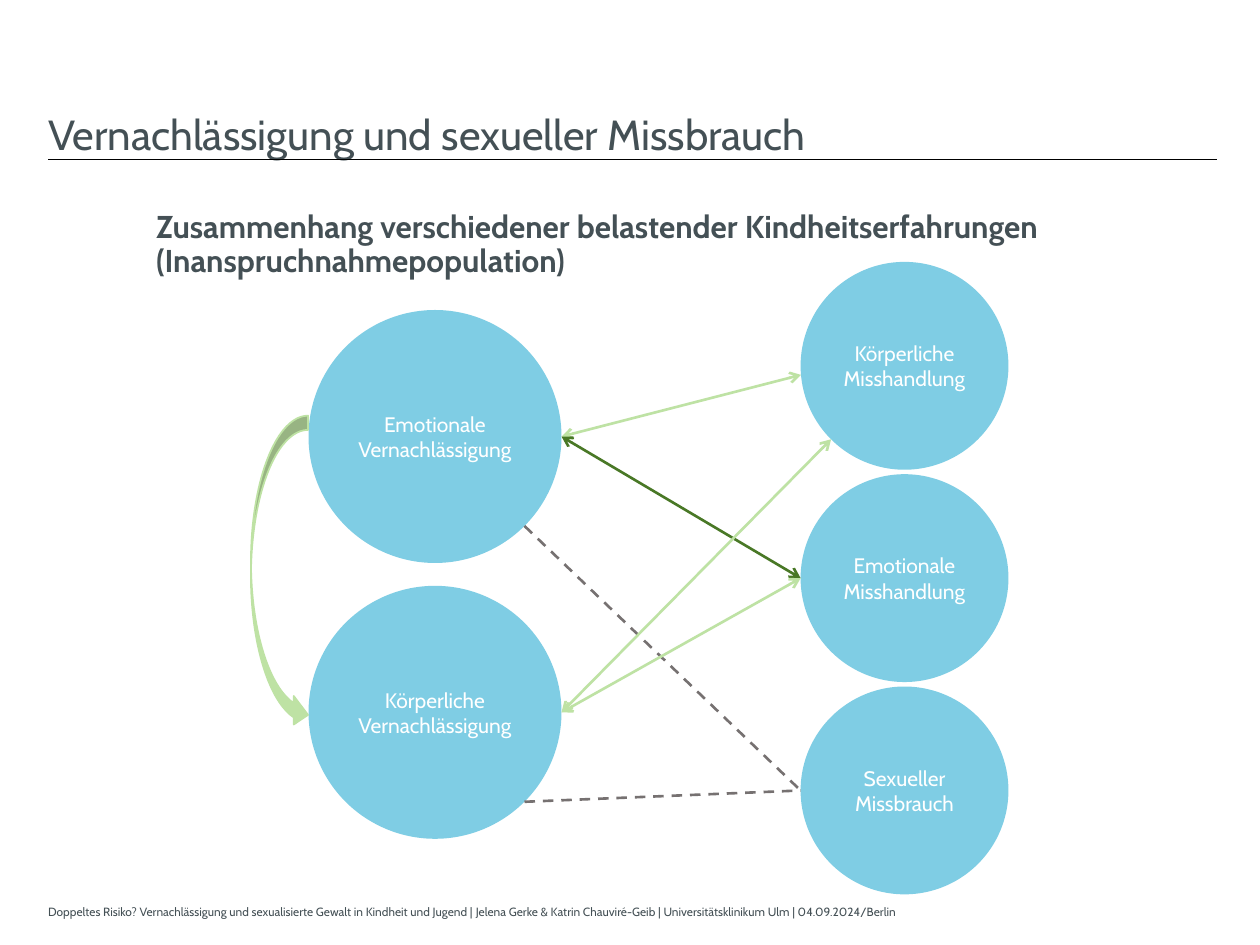
import math

import pptx
import pptx.dml.color
import pptx.enum.dml
import pptx.enum.shapes
import pptx.enum.text
import pptx.oxml
import pptx.oxml.ns
import pptx.util

Cm = pptx.util.Cm
Pt = pptx.util.Pt
SHAPE = pptx.enum.shapes.MSO_SHAPE
ANCHOR = pptx.enum.text.MSO_ANCHOR
ALIGN = pptx.enum.text.PP_ALIGN

COLORS = {
    "text": "445055",
    "rule": "000000",
    "circle": "009DCA",
    "label": "FFFFFF",
    "weak": "BEE2A4",
    "strong": "497826",
    "none": "767171",
}
FONT = "Cabin"


def rgb(name):
    return pptx.dml.color.RGBColor.from_string(COLORS[name])


def add_xml(parent, tag, **attributes):
    element = pptx.oxml.parse_xml(f"<a:{tag} {pptx.oxml.ns.nsdecls('a')}/>")
    for key, value in attributes.items():
        element.set(key, value)
    parent.append(element)


def write(shape, text, size=12, color="text", bold=False, align=ALIGN.LEFT,
          anchor=ANCHOR.TOP, insets=(0, 0.15, 0, 0.1), spacing=None):
    """Fill a shape with one formatted paragraph; insets are l, t, r, b in cm."""
    frame = shape.text_frame
    frame.word_wrap = True
    frame.vertical_anchor = anchor
    (frame.margin_left, frame.margin_top,
     frame.margin_right, frame.margin_bottom) = map(Cm, insets)
    paragraph = frame.paragraphs[0]
    paragraph.alignment = align
    paragraph.line_spacing = spacing
    run = paragraph.add_run()
    run.text = text
    run.font.name = FONT
    run.font.size = Pt(size)
    run.font.bold = bold
    run.font.color.rgb = rgb(color)


def add_text(slide, box, text, **style):
    write(slide.shapes.add_textbox(*map(Cm, box)), text, **style)


def add_line(slide, start, end, color, width=1.5, arrows=False, dashed=False):
    line = slide.shapes.add_connector(
        pptx.enum.shapes.MSO_CONNECTOR.STRAIGHT, *map(Cm, start + end))
    line.line.color.rgb = rgb(color)
    line.line.width = Pt(width)
    if dashed:
        line.line.dash_style = pptx.enum.dml.MSO_LINE.DASH
    if arrows:
        for tag in ("headEnd", "tailEnd"):
            add_xml(line.line._get_or_add_ln(), tag, type="arrow")
    add_xml(line._element.spPr, "effectLst")


def rim(circle, degrees):
    """Point on a circle's rim, clockwise from its right side."""
    left, top, diameter = circle
    radius, angle = diameter / 2, math.radians(degrees)
    return (left + radius * (1 + math.cos(angle)),
            top + radius * (1 + math.sin(angle)))


def header(slide, left, top, width):
    add_text(slide, (left, top, 18, 1.22),
             "Vernachlässigung und sexueller Missbrauch", size=24)
    add_line(slide, (left, top + 1.19), (left + width, top + 1.19), "rule", width=0.5)
    add_text(slide, (left + 2.18, top + 2.08, 20.57, 1.68),
             "Zusammenhang verschiedener belastender Kindheitserfahrungen "
             "(Inanspruchnahmepopulation)", size=18, bold=True, spacing=0.9)


def footer(slide, left, top, width, height):
    add_text(slide, (left, top, width, height),
             "Doppeltes Risiko? Vernachlässigung und sexualisierte Gewalt in Kindheit "
             "und Jugend |\u00a0Jelena Gerke & Katrin Chauviré-Geib | "
             "Universitätsklinikum Ulm | 04.09.2024/Berlin",
             size=6.8, anchor=ANCHOR.MIDDLE, insets=(0, 0.13, 0.25, 0.13))


def circle_column(slide, left, top, diameter, pitch, labels):
    """Stack labelled circles and return their (left, top, diameter)."""
    circles = [(left, top + i * pitch, diameter) for i in range(len(labels))]
    for (x, y, size), label in zip(circles, labels):
        circle = slide.shapes.add_shape(SHAPE.OVAL, Cm(x), Cm(y), Cm(size), Cm(size))
        circle.shadow.inherit = False
        circle.fill.solid()
        circle.fill.fore_color.rgb = rgb("circle")
        add_xml(circle.fill._xPr.find(".//" + pptx.oxml.ns.qn("a:srgbClr")),
                "alpha", val="50000")
        circle.line.fill.background()
        write(circle, label, color="label", align=ALIGN.CENTER,
              anchor=ANCHOR.MIDDLE, insets=(0.1, 0.1, 0.1, 0.1))
    return circles


def relations(slide, left, top):
    """Draw both columns of experiences and the links between them."""
    emotional_neglect, physical_neglect = circle_column(
        slide, left + 1.16, top + 0.97, 5.1, 5.56,
        ["Emotionale Vernachlässigung", "Körperliche Vernachlässigung"])
    physical_abuse, emotional_abuse, sexual_abuse = circle_column(
        slide, left + 11.08, top, 4.19, 4.28,
        ["Körperliche Misshandlung", "Emotionale Misshandlung", "Sexueller Missbrauch"])

    # Start circle and angle, end circle and angle, strength of the link
    links = [
        (emotional_neglect, 0, physical_abuse, 175, "weak"),
        (emotional_neglect, 0, emotional_abuse, 180, "strong"),
        (emotional_neglect, 45, sexual_abuse, 180, "none"),
        (physical_neglect, 0, physical_abuse, 135, "weak"),
        (physical_neglect, 0, emotional_abuse, 180, "weak"),
        (physical_neglect, 45, sexual_abuse, 180, "none"),
    ]
    for start, start_angle, end, end_angle, strength in links:
        add_line(slide, rim(start, start_angle), rim(end, end_angle), strength,
                 arrows=strength != "none", dashed=strength == "none")

    # Curved arrow between the two forms of neglect
    arrow = slide.shapes.add_shape(SHAPE.CURVED_RIGHT_ARROW, Cm(left), Cm(top + 3.1),
                                   Cm(1.15), Cm(6.32))
    arrow.shadow.inherit = False
    arrow.fill.solid()
    arrow.fill.fore_color.rgb = rgb("weak")
    arrow.line.color.rgb = rgb("weak")
    arrow.line.width = Pt(1)


def main():
    deck = pptx.Presentation()
    deck.slide_width, deck.slide_height = Cm(25.4), Cm(19.05)
    slide = deck.slides.add_slide(deck.slide_layouts[6])
    header(slide, 0.97, 2.03, 23.57)
    footer(slide, 0.97, 18.06, 17.63, 0.64)
    relations(slide, 5.06, 5.28)
    deck.save("out.pptx")


if __name__ == "__main__":
    main()
